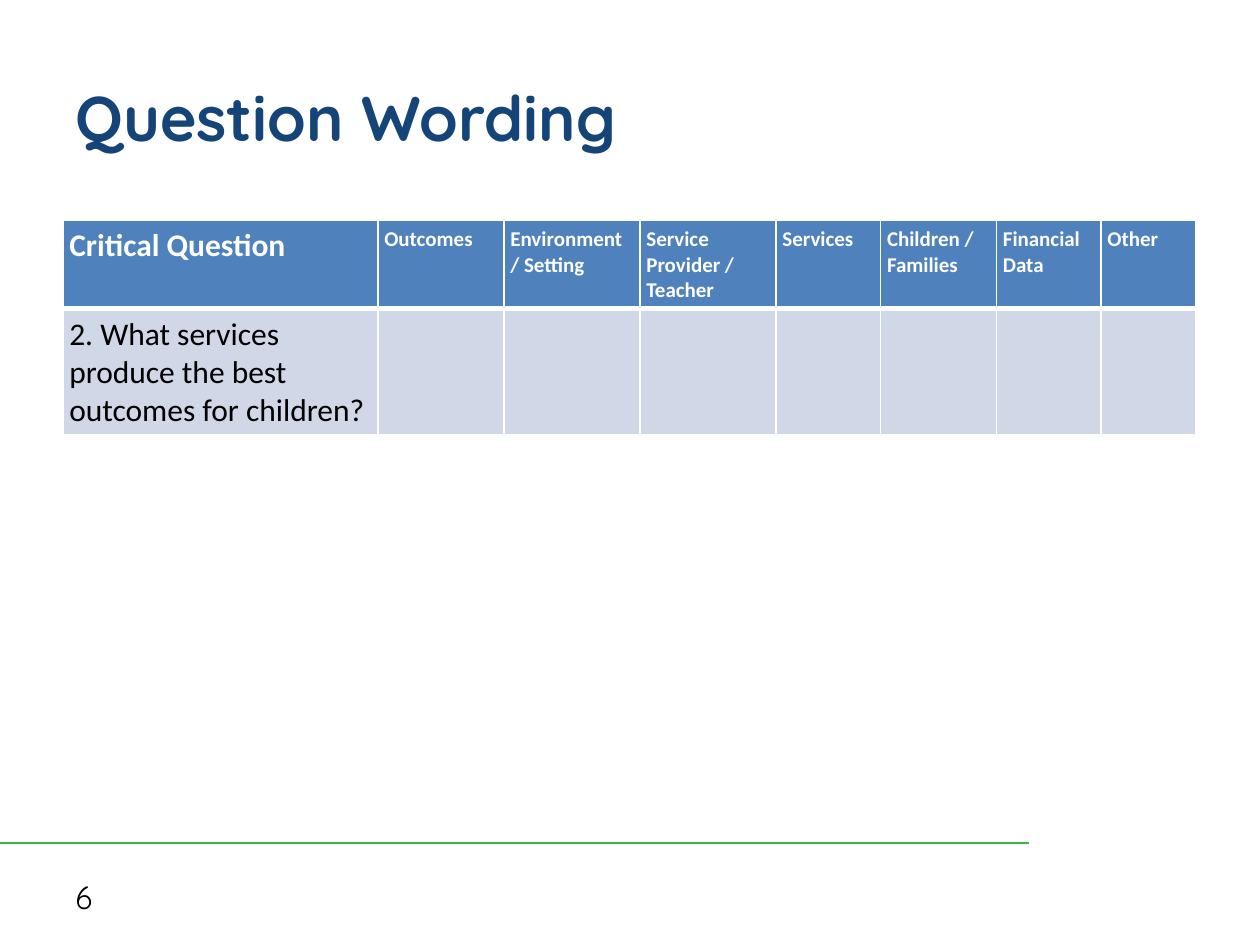
"""Build the Question Wording slide with its table of critical questions."""
from lxml import etree
from pptx import Presentation
from pptx.dml.color import RGBColor
from pptx.enum.shapes import MSO_CONNECTOR
from pptx.enum.text import MSO_ANCHOR, PP_ALIGN
from pptx.oxml.ns import qn
from pptx.util import Inches, Pt

STRAIGHT = MSO_CONNECTOR.STRAIGHT
MIDDLE = MSO_ANCHOR.MIDDLE
LEFT = PP_ALIGN.LEFT

NAVY = RGBColor(0x15, 0x45, 0x78)
GREEN = RGBColor(0x39, 0xB5, 0x4A)
BLUE = RGBColor(0x4F, 0x81, 0xBD)
PALE = RGBColor(0xD0, 0xD8, 0xE8)
WHITE = RGBColor(0xFF, 0xFF, 0xFF)
BLACK = RGBColor(0, 0, 0)

TITLE = "Question Wording"
NUMBER = "6"
COLUMNS = [
    ("Critical Question", 2.5), ("Outcomes", 1),
    ("Environment / Setting", 1.08), ("Service Provider / Teacher", 1.08),
    ("Services", 0.83), ("Children / Families", 0.92),
    ("Financial Data", 0.83), ("Other", 0.75),
]
QUESTION = "2. What services produce the best outcomes for children?"
HEADS = [head for head, _ in COLUMNS]
ROWS = [
    dict(texts=HEADS, height=0.7, fill=BLUE, color=WHITE, bold=True,
         edges=dict(L=1, R=1, T=1, B=3)),
    dict(texts=[QUESTION] + [""] * (len(COLUMNS) - 1), height=1, fill=PALE,
         color=BLACK, bold=False, edges=dict(L=1, R=1, T=3, B=1)),
]
WIDE, HIGH = 10, 7.5
EDGE = 0.05 * WIDE
INSET = Inches(0.05)


def write(frame, text, size=18, font="Calibri", color=BLACK, bold=False, anchor=None):
    frame.word_wrap = True
    if anchor is not None:
        frame.vertical_anchor = anchor
    para = frame.paragraphs[0]
    para.alignment = LEFT
    para.text = text
    para.font.size = Pt(size)
    para.font.name = font
    para.font.bold = bold
    para.font.color.rgb = color


def border(cell, edges):
    props = cell._tc.get_or_add_tcPr()
    for side, width in edges.items():
        line = etree.SubElement(props, qn(f"a:ln{side}"), w=str(Pt(width)))
        fill = etree.SubElement(line, qn("a:solidFill"))
        etree.SubElement(fill, qn("a:srgbClr"), val=str(WHITE))


def add_rule(slide):
    level = Inches(6.69)
    rule = slide.shapes.add_connector(STRAIGHT, 0, level, Inches(8.17), level)
    rule.line.color.rgb = GREEN
    rule.line.width = Pt(1.5)
    etree.SubElement(rule._element.spPr, qn("a:effectLst"))


def add_grid(slide):
    frame = slide.shapes.add_table(
        len(ROWS), len(COLUMNS), Inches(EDGE), Inches(1.75),
        Inches(sum(width for _, width in COLUMNS)),
        Inches(sum(row["height"] for row in ROWS)))
    table = frame.table
    for col, (_, width) in zip(table.columns, COLUMNS):
        col.width = Inches(width)
    for r, row in enumerate(ROWS):
        table.rows[r].height = Inches(row["height"])
        for c, text in enumerate(row["texts"]):
            cell = table.cell(r, c)
            cell.margin_left = cell.margin_right = INSET
            cell.margin_top = cell.margin_bottom = INSET
            border(cell, row["edges"])
            cell.fill.solid()
            cell.fill.fore_color.rgb = row["fill"]
            write(cell.text_frame, text, size=12 if c else 18,
                  color=row["color"], bold=row["bold"])


def main():
    deck = Presentation()
    deck.slide_width, deck.slide_height = Inches(WIDE), Inches(HIGH)
    slide = deck.slides.add_slide(deck.slide_layouts[5])
    add_rule(slide)
    page = slide.shapes.add_textbox(Inches(EDGE), Inches(6.92), Inches(2.33), Inches(0.4))
    write(page.text_frame, NUMBER, font="Quicksand", anchor=MIDDLE)
    title = slide.shapes.title
    title.left, title.top = Inches(EDGE), Inches(0.04 * HIGH)
    title.width, title.height = Inches(WIDE - 2 * EDGE), Inches(1.25)
    write(title.text_frame, TITLE, size=36, font="Quicksand", color=NAVY,
          bold=True, anchor=MIDDLE)
    add_grid(slide)
    deck.save("out.pptx")


if __name__ == "__main__":
    main()
